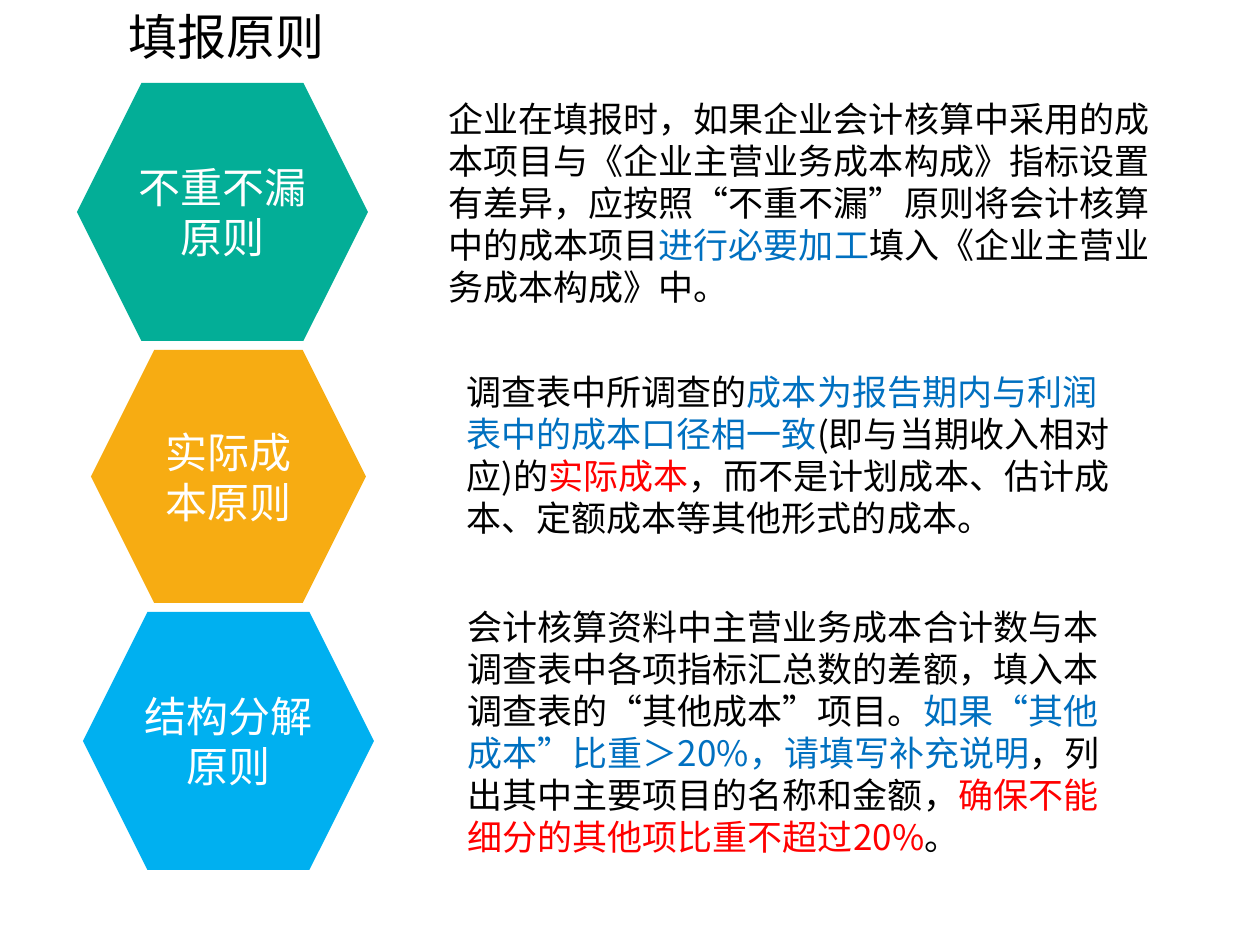
import pptx
import pptx.util
import pptx.dml.color
import pptx.enum.shapes
import pptx.enum.text
import pptx.enum.lang
import pptx.oxml.ns
import lxml.etree

PX = 914400 // 126
SANS = "Noto Sans CJK SC"
ALIGN = pptx.enum.text.PP_ALIGN
ANCHOR = pptx.enum.text.MSO_ANCHOR
HEX = {"green": "03AE97", "amber": "F7AC12", "sky": "00B0F0",
       "white": "FFFFFF", "black": "000000", "blue": "0070C0", "red": "FF0000"}

TITLE = ("填报原则", (15, 0, 423, 72))
# Each rule: fill, hexagon box, label lines, label font, body box, body runs
RULES = [
    ("green", (77, 83, 291, 258), ["不重不漏", "原则"], "Calibri",
     (436, 91, 731, 224), [
         ("企业在填报时，如果企业会计核算中采用的成本项目与《企业主营业务成本构成》"
          "指标设置有差异，应按照“不重不漏”原则将会计核算中的成本项目", "black"),
         ("进行必要加工", "blue"),
         ("填入《企业主营业务成本构成》中。", "black")]),
    ("amber", (91, 350, 275, 253), ["实际成本原则"], SANS,
     (454, 364, 679, 183), [
         ("调查表中所调查的", "black"),
         ("成本为报告期内与利润表中的成本口径相一致", "blue"),
         ("(即与当期收入相对应)的", "black"),
         ("实际成本", "red"),
         ("，而不是计划成本、估计成本、定额成本等其他形式的成本。", "black")]),
    ("sky", (83, 612, 291, 258), ["结构分解", "原则"], "Calibri",
     (455, 599, 679, 267), [
         ("会计核算资料中主营业务成本合计数与本调查表中各项指标汇总数的差额，"
          "填入本调查表的“其他成本”项目。", "black"),
         ("如果“其他成本”比重＞20%，请填写补充说明", "blue"),
         ("，列出其中主要项目的名称和金额，", "black"),
         ("确保不能细分的其他项比重不超过20%", "red"),
         ("。", "black")]),
]


def scale(box):
    return [pptx.util.Emu(v * PX) for v in box]


def color(name):
    return pptx.dml.color.RGBColor.from_string(HEX[name])


def write(frame, paras, size, font=SANS, align=ALIGN.LEFT,
          anchor=ANCHOR.TOP, wrap=True):
    """Fill a text frame with paragraphs, each a list of (text, colour) runs."""
    frame.auto_size = pptx.enum.text.MSO_AUTO_SIZE.NONE
    frame.word_wrap = wrap
    frame.vertical_anchor = anchor
    for i, runs in enumerate(paras):
        para = frame.add_paragraph() if i else frame.paragraphs[0]
        para.alignment = align
        para.line_spacing = pptx.util.Pt(size * 1.2)
        para.space_before = pptx.util.Pt(0)
        for text, tint in runs:
            run = para.add_run()
            run.text = text
            run.font.size = pptx.util.Pt(size)
            run.font.name = font
            run.font.color.rgb = color(tint)
            run.font.language_id = pptx.enum.lang.MSO_LANGUAGE_ID.SIMPLIFIED_CHINESE
            east = lxml.etree.SubElement(run.font._element, pptx.oxml.ns.qn("a:ea"))
            east.set("typeface", SANS)


def label(slide, fill, box, lines, font):
    kind = pptx.enum.shapes.MSO_SHAPE.HEXAGON
    shape = slide.shapes.add_shape(kind, *scale(box))
    shape.shadow.inherit = False
    shape.adjustments[0] = 0.25
    shape.fill.solid()
    shape.fill.fore_color.rgb = color(fill)
    shape.line.fill.background()
    write(shape.text_frame, [[(line, "white")] for line in lines], 24, font,
          ALIGN.CENTER, ANCHOR.MIDDLE, wrap=len(lines) == 1)


def main():
    deck = pptx.Presentation()
    deck.slide_width, deck.slide_height = scale((1260, 945))
    slide = deck.slides.add_slide(deck.slide_layouts[5])

    text, box = TITLE
    title = slide.shapes.title
    title.left, title.top, title.width, title.height = scale(box)
    write(title.text_frame, [[(text, "black")]], 28, align=ALIGN.CENTER)

    for fill, box, lines, font, area, runs in RULES:
        label(slide, fill, box, lines, font)
        body = slide.shapes.add_textbox(*scale(area))
        write(body.text_frame, [runs], 20)

    deck.save("out.pptx")


if __name__ == "__main__":
    main()
